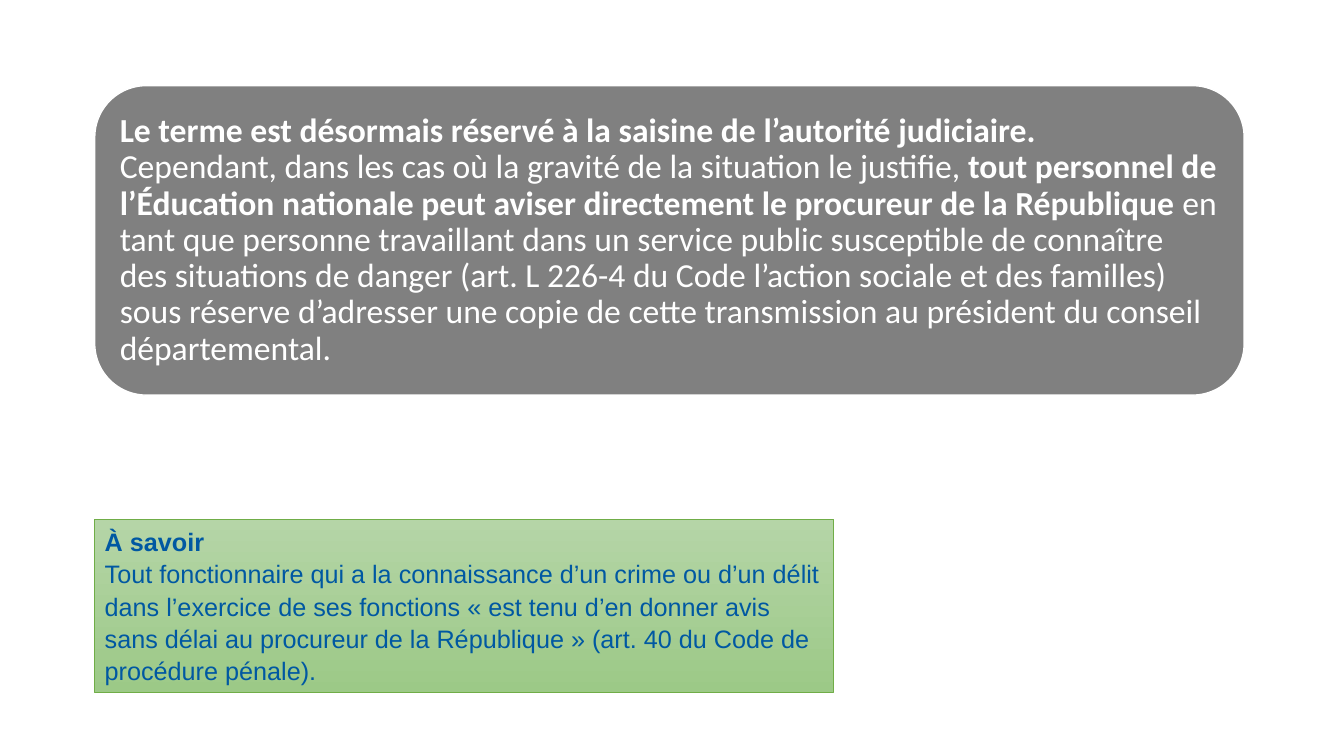
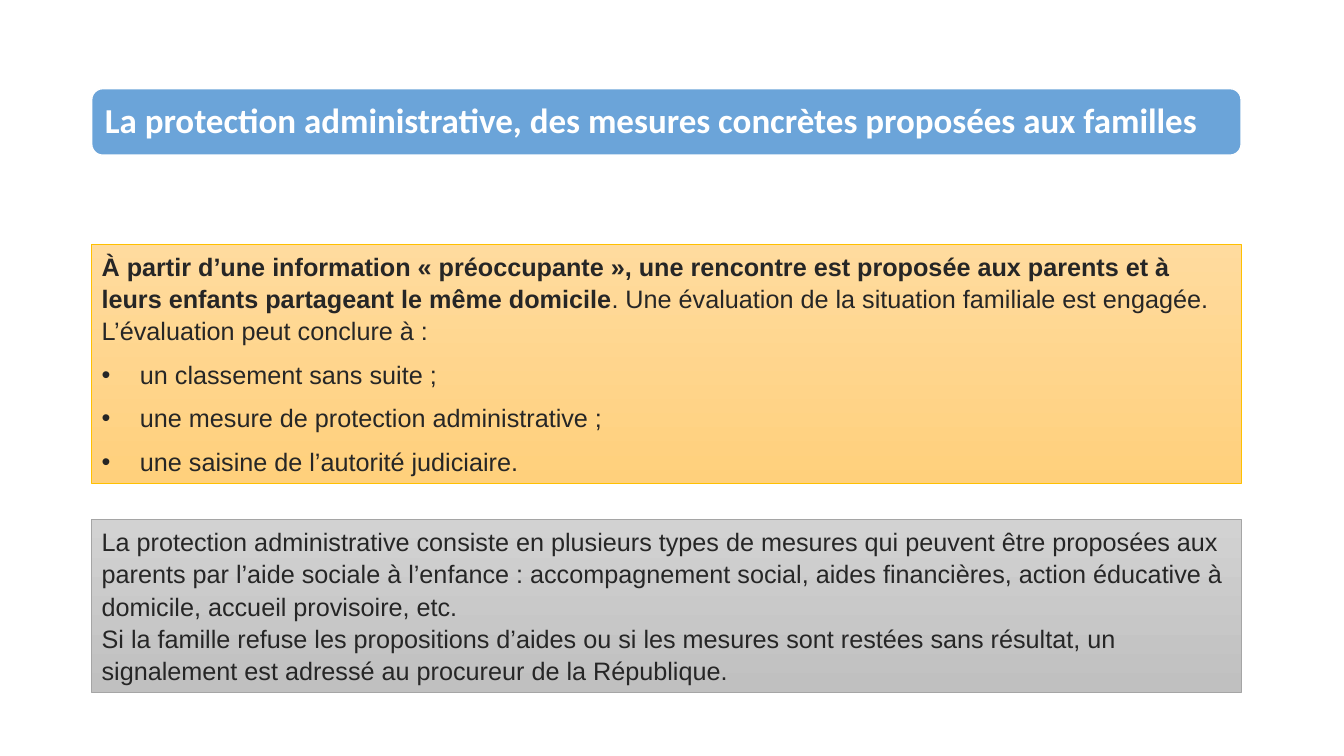
from lxml import etree
from pptx import Presentation
from pptx import util as u
from pptx.dml.color import RGBColor
from pptx.enum import shapes, text
from pptx.oxml.ns import qn

PX = 9144  # 100 px to the inch
SLIDE_W, SLIDE_H = 1333, 750
NOTE_TOP, NOTE_H = 515, 172
WHITE, INK, BLUE = "FFFFFF", "262626", "0058A2"

BANNER = dict(shape=shapes.MSO_SHAPE.ROUNDED_RECTANGLE, line=(WHITE, 1), inset=10,
              anchor=text.MSO_ANCHOR.MIDDLE, font="Calibri", color=WHITE,
              spacing=0.9, after=0, fit=text.MSO_AUTO_SIZE.NONE)
NOTE = dict(shape=shapes.MSO_SHAPE.RECTANGLE, inset=None, anchor=text.MSO_ANCHOR.TOP,
            font="Arial", size=18, color=INK, spacing=1.07, after=8,
            fit=text.MSO_AUTO_SIZE.SHAPE_TO_FIT_TEXT)
GREEN = dict(fill=("B5D5A7", "9CC987"), line=("70AD47", 0.5), color=BLUE)
ORANGE = dict(fill=("FFDB9E", "FFD07C"), line=("FFC000", 0.5))
GREY = dict(fill=("D2D2D2", "C0C0C0"), line=("A5A5A5", 0.5))

# Each box: place (left, top, width, height), format, paragraphs.
# Each paragraph: (bulleted, [(bold, words), ...]).
SLIDES = [
    [
        ((94, 85, 1140, 307), BANNER | dict(fill=("808080",), size=24), [
            (False, [
                (True, "Le terme est désormais réservé à la saisine de l’autorité judiciaire.\n"),
                (False, "Cependant, dans les cas où la gravité de la situation le justifie, "),
                (True, "tout personnel de l’Éducation nationale peut aviser directement "
                       "le procureur de la République "),
                (False, "en tant que personne travaillant dans un service public susceptible "
                        "de connaître des situations de danger (art. L 226-4 du Code l’action "
                        "sociale et des familles) sous réserve d’adresser une copie de cette "
                        "transmission au président du conseil départemental."),
            ]),
        ]),
        ((94, NOTE_TOP, 733, NOTE_H), NOTE | GREEN, [
            (False, [
                (True, "À savoir\n"),
                (False, "Tout fonctionnaire qui a la connaissance d’un crime ou d’un délit dans "
                        "l’exercice de ses fonctions « est tenu d’en donner avis sans délai au "
                        "procureur de la République » (art. 40 du Code de procédure pénale)."),
            ]),
        ]),
    ],
    [
        ((91, 88, 1140, 66), BANNER | dict(fill=("5B9BD5",), alpha=90, size=25), [
            (False, [(True, "La protection administrative, des mesures concrètes "
                            "proposées aux familles")]),
        ]),
        ((91, 242, 1140, 238), NOTE | ORANGE, [
            (False, [
                (True, "À partir d’une information « préoccupante », une rencontre est proposée "
                       "aux parents et à leurs enfants partageant le même domicile"),
                (False, ". Une évaluation de la situation familiale est engagée. "
                        "L’évaluation peut conclure à :"),
            ]),
            (True, [(False, "un classement sans suite ;")]),
            (True, [(False, "une mesure de protection administrative ;")]),
            (True, [(False, "une saisine de l’autorité judiciaire.")]),
        ]),
        ((91, NOTE_TOP, 1140, NOTE_H), NOTE | GREY, [
            (False, [
                (False, "La protection administrative consiste en plusieurs types de mesures qui "
                        "peuvent être proposées aux parents par l’aide sociale à l’enfance : "
                        "accompagnement social, aides financières, action éducative à domicile, "
                        "accueil provisoire, etc.\n"
                        "Si la famille refuse les propositions d’aides ou si les mesures sont "
                        "restées sans résultat, un signalement est adressé au procureur de la "
                        "République."),
            ]),
        ]),
    ],
]


def rgb(value):
    return RGBColor.from_string(value)


def set_all(target, values):
    for name, value in values.items():
        setattr(target, name, value)


def paint(box, look):
    """Fill with one colour or a top-to-bottom gradient, then outline."""
    colors = look["fill"]
    if len(colors) == 1:
        box.fill.solid()
        box.fill.fore_color.rgb = rgb(colors[0])
        if "alpha" in look:
            color = box.fill._xPr.find(qn("a:solidFill"))[0]
            etree.SubElement(color, qn("a:alpha"), val=str(look["alpha"] * 1000))
    else:
        box.fill.gradient()
        box.fill.gradient_angle = 270
        for stop, color in zip(box.fill.gradient_stops, colors):
            stop.color.rgb = rgb(color)
    line_color, width = look["line"]
    box.line.color.rgb = rgb(line_color)
    box.line.width = u.Pt(width)
    box.shadow.inherit = False


def add_bullet(paragraph, indent=38):
    props = paragraph._p.get_or_add_pPr()
    props.set("marL", str(indent * PX))
    props.set("indent", str(-indent * PX))
    etree.SubElement(props, qn("a:buFont"), typeface="Arial")
    etree.SubElement(props, qn("a:buChar"), char="•")


def write(paragraph, runs, look):
    for bold, words in runs:
        for number, part in enumerate(words.split("\n")):
            if number:
                paragraph.add_line_break()
            if part:
                run = paragraph.add_run()
                run.text = part
                set_all(run.font, dict(name=look["font"], size=u.Pt(look["size"]), bold=bold))
                run.font.color.rgb = rgb(look["color"])


def add_box(slide, place, look, paragraphs):
    box = slide.shapes.add_shape(look["shape"], *(n * PX for n in place))
    paint(box, look)
    frame = box.text_frame
    set_all(frame, dict(word_wrap=True, auto_size=look["fit"], vertical_anchor=look["anchor"]))
    if look["inset"] is not None:
        sides = ("margin_left", "margin_top", "margin_right", "margin_bottom")
        set_all(frame, dict.fromkeys(sides, look["inset"] * PX))
    for number, (bulleted, runs) in enumerate(paragraphs):
        paragraph = frame.add_paragraph() if number else frame.paragraphs[0]
        set_all(paragraph, dict(alignment=text.PP_ALIGN.LEFT, line_spacing=look["spacing"],
                                space_after=u.Pt(look["after"])))
        if bulleted:
            add_bullet(paragraph)
        write(paragraph, runs, look)


def main():
    deck = Presentation()
    set_all(deck, dict(slide_width=SLIDE_W * PX, slide_height=SLIDE_H * PX))
    for boxes in SLIDES:
        slide = deck.slides.add_slide(deck.slide_layouts[6])
        for place, look, paragraphs in boxes:
            add_box(slide, place, look, paragraphs)
    deck.save("out.pptx")


if __name__ == "__main__":
    main()
